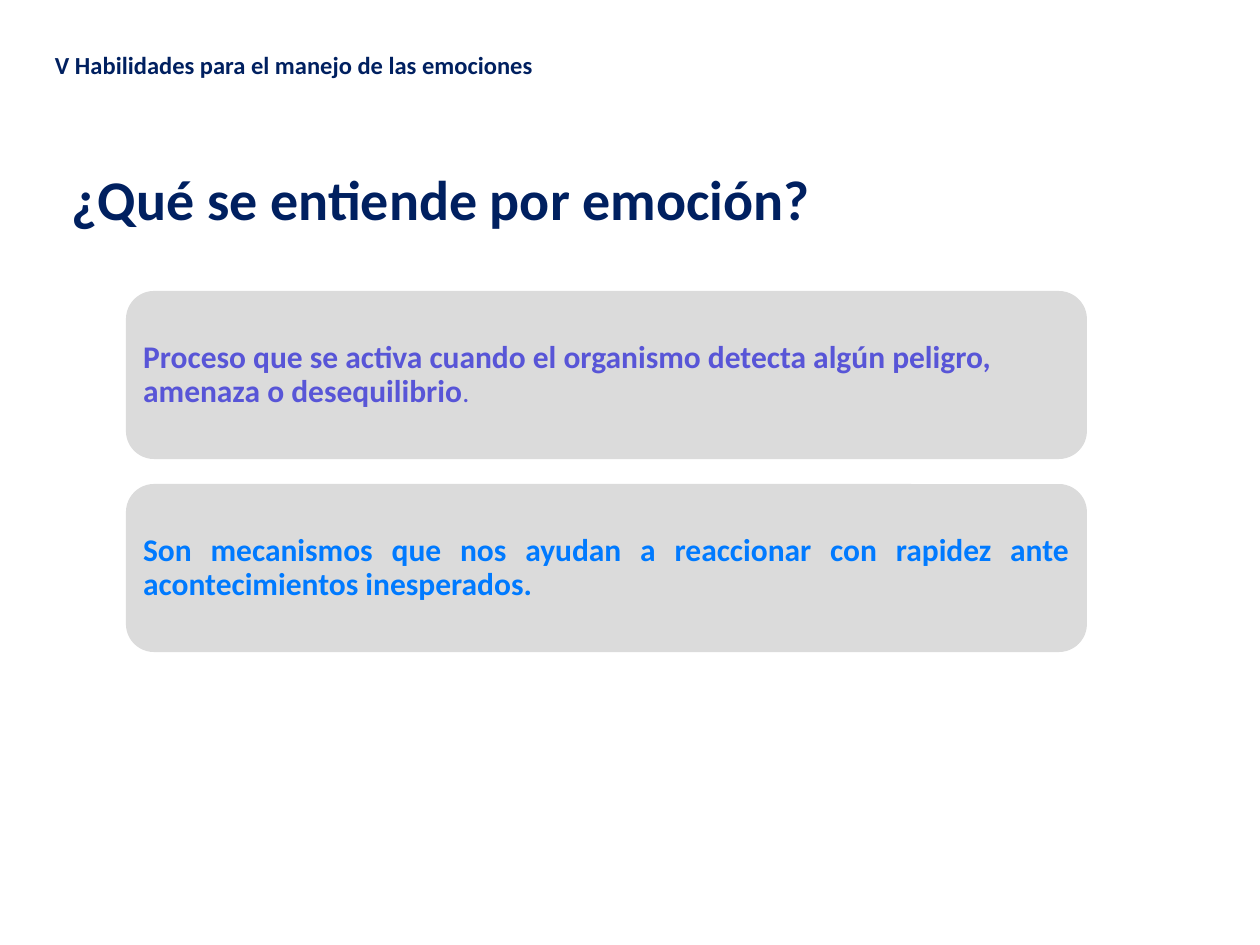
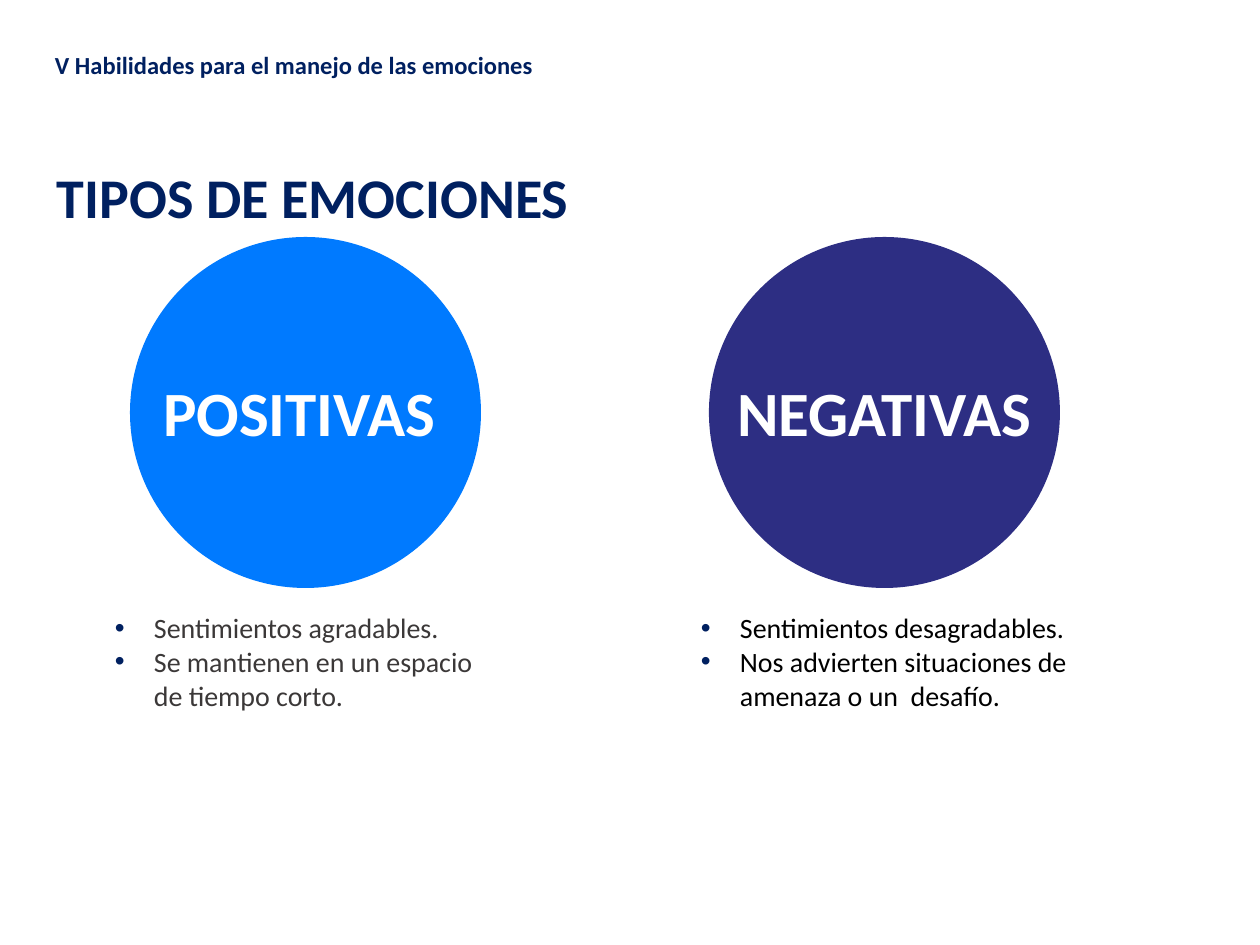
import lxml.etree
import pptx
import pptx.dml.color
import pptx.enum.shapes
import pptx.enum.text
import pptx.oxml.ns
import pptx.util

PX = 914400 // 126
NAVY, BLUE, INDIGO, VIOLET = "002060", "007AFF", "2D2E83", "5855D7"
GREY, DARK, BLACK, WHITE = "DBDBDB", "3B3838", "000000", "FFFFFF"
ALIGN = pptx.enum.text.PP_ALIGN
ANCHOR = pptx.enum.text.MSO_ANCHOR
SHAPE = pptx.enum.shapes.MSO_SHAPE


def color(hex_string):
    return pptx.dml.color.RGBColor.from_string(hex_string)


def write(shape, paragraphs, box=None, size=18, ink=NAVY, bold=True, align=ALIGN.LEFT,
          anchor=ANCHOR.TOP, wrap=True, inset=(13, 6), line_spacing=1.0, space=0,
          bullet=None):
    if box:
        shape.left, shape.top, shape.width, shape.height = [n * PX for n in box]
    frame = shape.text_frame
    frame.word_wrap = wrap
    frame.auto_size = pptx.enum.text.MSO_AUTO_SIZE.NONE
    frame.vertical_anchor = anchor
    frame.margin_left = frame.margin_right = inset[0] * PX
    frame.margin_top = frame.margin_bottom = inset[1] * PX
    for index, text in enumerate(paragraphs):
        paragraph = frame.add_paragraph() if index else frame.paragraphs[0]
        paragraph.alignment = align
        paragraph.line_spacing = line_spacing
        paragraph.space_before = pptx.util.Pt(0)
        paragraph.space_after = pptx.util.Pt(space)
        if bullet:
            properties = paragraph._p.get_or_add_pPr()
            properties.set("marL", str(39 * PX))
            properties.set("indent", str(-39 * PX))
            qn = pptx.oxml.ns.qn
            bullet_color = lxml.etree.SubElement(properties, qn("a:buClr"))
            lxml.etree.SubElement(bullet_color, qn("a:srgbClr"), val=bullet)
            lxml.etree.SubElement(properties, qn("a:buFont"), typeface="Arial")
            lxml.etree.SubElement(properties, qn("a:buChar"), char="•")
        run = paragraph.add_run()
        run.text = text
        run.font.name = "Calibri"
        run.font.size = pptx.util.Pt(size)
        run.font.bold = bold
        run.font.color.rgb = color(ink)


presentation = pptx.Presentation()
presentation.slide_width = 1260 * PX
presentation.slide_height = 945 * PX

slides = []
for layout, title, box, align, line_spacing in [
    (5, "¿Qué se entiende por emoción?", (59, 111, 771, 115), ALIGN.LEFT, 1.7),
    (3, "TIPOS DE EMOCIONES", (42, 123, 542, 105), ALIGN.CENTER, 1.5),
]:
    slide = presentation.slides.add_slide(presentation.slide_layouts[layout])
    write(slide.shapes.title, [title], box, size=32, align=align, wrap=False,
          line_spacing=line_spacing, space=4.5)
    write(slide.shapes.add_textbox(0, 0, 0, 0),
          ["V Habilidades para el manejo de las emociones"], (42, 44, 693, 43), size=14)
    slides.append(slide)

definition_slide, types_slide = slides

definitions = [
    ("Proceso que se activa cuando el organismo detecta algún peligro, "
     "amenaza o desequilibrio", VIOLET, ALIGN.LEFT),
    ("Son mecanismos que nos ayudan a reaccionar con rapidez ante "
     "acontecimientos inesperados.", BLUE, ALIGN.JUSTIFY),
]
cards = []
for index, (text, ink, align) in enumerate(definitions):
    card = definition_slide.shapes.add_shape(SHAPE.ROUNDED_RECTANGLE, 0, 0, 0, 0)
    card.shadow.inherit = False
    card.fill.solid()
    card.fill.fore_color.rgb = color(GREY)
    card.line.fill.background()
    write(card, [text], (126, 291 + 193 * index, 961, 168), ink=ink, align=align,
          anchor=ANCHOR.MIDDLE, inset=(9, 9), line_spacing=0.9)
    cards.append(card)

period = cards[0].text_frame.paragraphs[0].add_run()
period.text = "."
period.font.name = "Calibri"
period.font.size = pptx.util.Pt(16)
period.font.bold = False
period.font.color.rgb = color(VIOLET)

emotion_types = [
    ("POSITIVAS", BLUE, 130, (150, 310), ALIGN.LEFT, (102, 386), DARK,
     ["Sentimientos agradables.", "Se mantienen en un espacio de tiempo corto."]),
    ("NEGATIVAS", INDIGO, 709, (719, 331), ALIGN.CENTER, (688, 427), BLACK,
     ["Sentimientos desagradables.",
      "Nos advierten situaciones de amenaza o un  desafío."]),
]
for index, (name, fill, left, label, align, column, ink, traits) in enumerate(emotion_types):
    circle = types_slide.shapes.add_shape(SHAPE.OVAL, left * PX, 237 * PX, 351 * PX, 351 * PX)
    circle.shadow.inherit = False
    circle.fill.solid()
    circle.fill.fore_color.rgb = color(fill)
    circle.line.fill.background()
    write(types_slide.shapes.add_textbox(0, 0, 0, 0), [name], (label[0], 368, label[1], 89),
          size=36, ink=WHITE, align=align)
    write(types_slide.placeholders[index + 1], traits, (column[0], 605, column[1], 149),
          size=16, ink=ink, bold=False, bullet=NAVY)

presentation.save("out.pptx")
